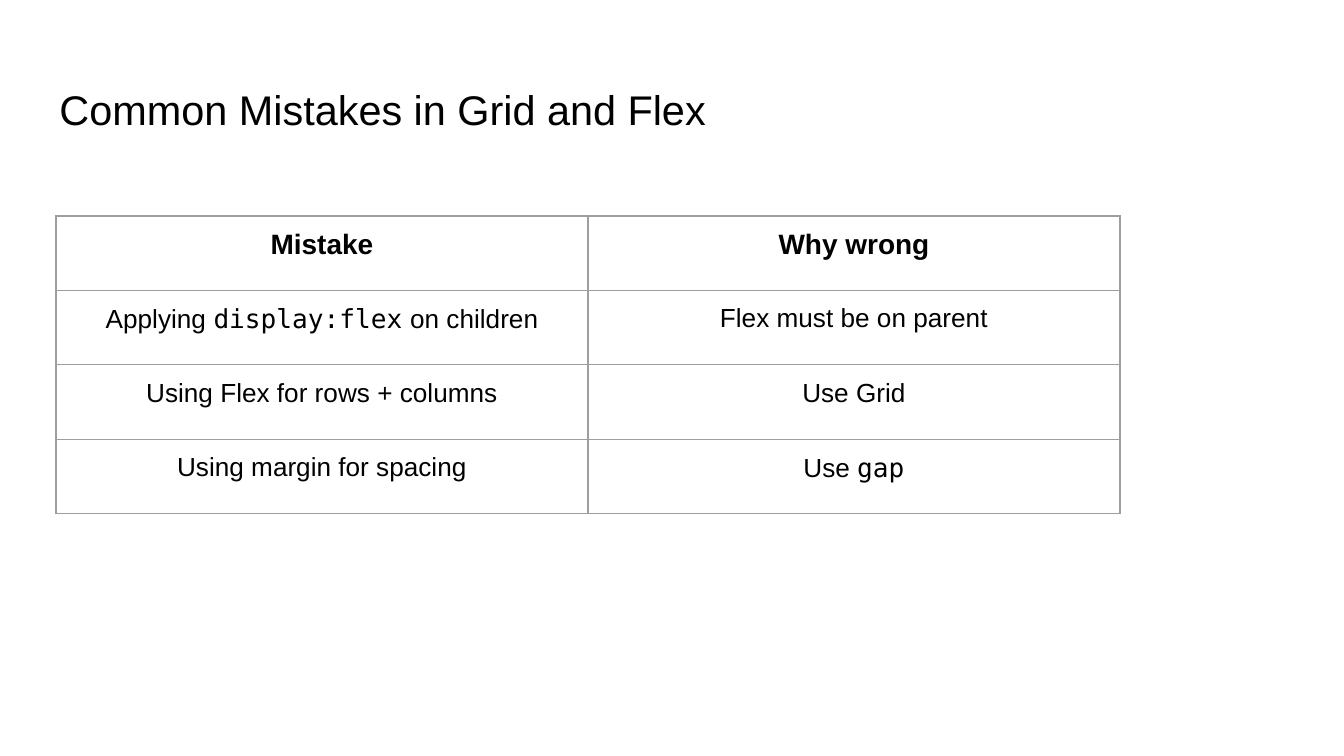
from pptx import Presentation
from pptx.dml.color import RGBColor
from pptx.enum.text import MSO_ANCHOR as Anchor, MSO_AUTO_SIZE as Fit, PP_ALIGN as Align
from pptx.oxml import parse_xml
from pptx.oxml.ns import nsdecls
from pptx.util import Pt

BLACK = RGBColor(0x00, 0x00, 0x00)
GREY = RGBColor(0x9E, 0x9E, 0x9E)
SANS = "Arial"
MONO = "DejaVu Sans Mono"
SCALE = 914400 / 134.4

ROWS = [
    ("Mistake", "Why wrong"),
    ("Applying `display:flex` on children", "Flex must be on parent"),
    ("Using Flex for rows + columns", "Use Grid"),
    ("Using margin for spacing", "Use `gap`"),
]


def emu(px):
    return round(px * SCALE)


class Deck:
    def __init__(self, width, height):
        self.file = Presentation()
        self.file.slide_width = emu(width)
        self.file.slide_height = emu(height)
        self.slide = self.file.slides.add_slide(self.file.slide_layouts[5])

    def style(self, para, size, align, bold=False):
        para.alignment = align
        font = para.font
        font.name, font.size, font.bold = SANS, Pt(size), bold
        font.color.rgb = BLACK

    def pad(self, item):
        item.margin_left = item.margin_right = Pt(7.2)
        item.margin_top = item.margin_bottom = Pt(7.2)

    def title(self, text, left, top, width, height):
        shape = self.slide.shapes.title
        shape.left, shape.top = emu(left), emu(top)
        shape.width, shape.height = emu(width), emu(height)
        frame = shape.text_frame
        frame.text = text
        frame.auto_size = Fit.NONE
        frame.vertical_anchor = Anchor.MIDDLE
        self.pad(frame)
        self.style(frame.paragraphs[0], 22.2, Align.LEFT)

    def cell(self, cell, text, head):
        self.pad(cell)
        cell.vertical_anchor = Anchor.TOP
        para = cell.text_frame.paragraphs[0]
        self.style(para, 15 if head else 14, Align.CENTER, head)
        for i, part in enumerate(text.split("`")):
            if part:
                run = para.add_run()
                run.text = part
                if i % 2:
                    run.font.name = MONO
        props = cell._tc.get_or_add_tcPr()
        for side in "LRTB":
            props.append(parse_xml(
                f'<a:ln{side} {nsdecls("a")} w="{Pt(0.75)}"><a:solidFill>'
                f'<a:srgbClr val="{GREY}"/></a:solidFill></a:ln{side}>'))
        cell.fill.background()

    def table(self, rows, left, top, width, height):
        box = (emu(n) for n in (left, top, width, height))
        table = self.slide.shapes.add_table(len(rows), len(rows[0]), *box).table
        table.first_row = table.horz_banding = False
        for r, row in enumerate(rows):
            for c, text in enumerate(row):
                self.cell(table.cell(r, c), text, r == 0)

    def save(self):
        self.file.save("out.pptx")


def main():
    deck = Deck(1344, 756)
    deck.title("Common Mistakes in Grid and Flex", 46, 66, 1252, 85)
    deck.table(ROWS, 56, 216, 1064, 298)
    deck.save()


if __name__ == "__main__":
    main()
